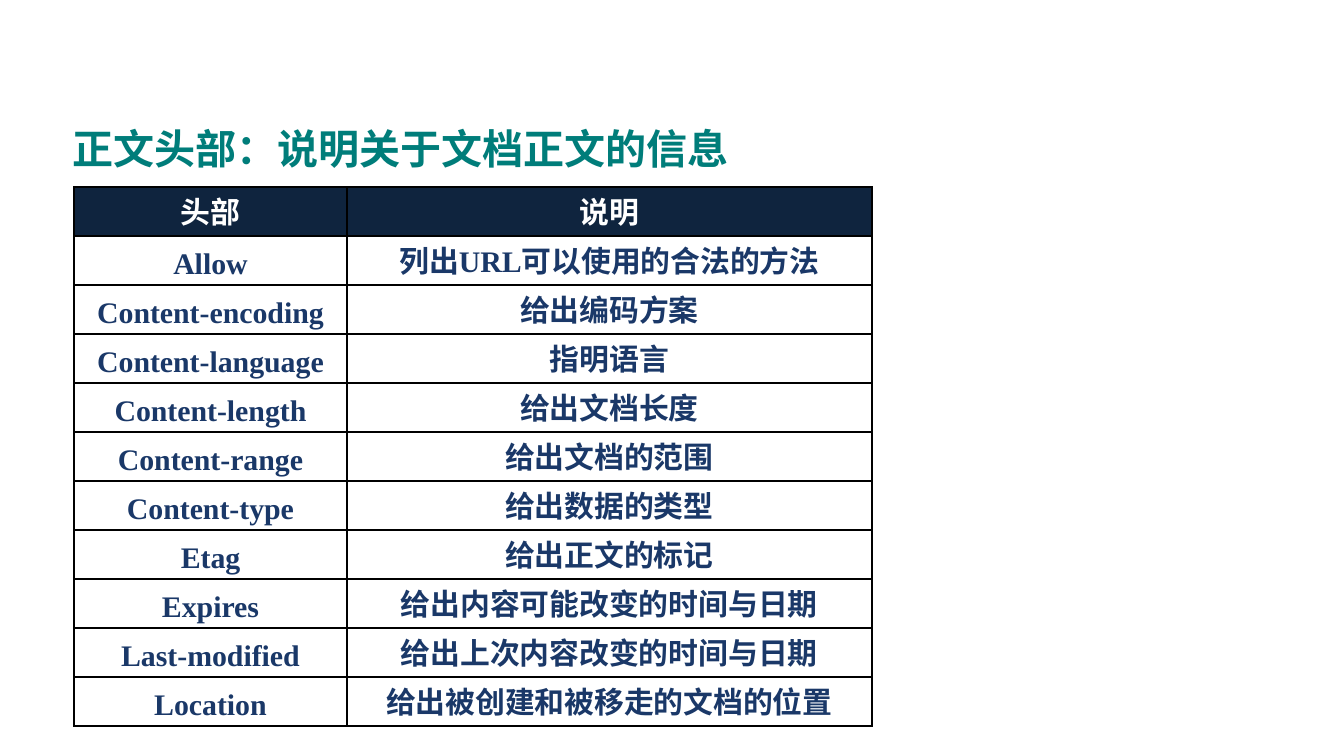
import pptx
import pptx.dml.color
import pptx.enum.text
import pptx.oxml
import pptx.oxml.ns
import pptx.util

PX = 914400 / 134.4  # EMU in one px

THEME = {
    "font": "Times New Roman",
    "title": "007D7A",
    "head_text": "FFFFFF",
    "head_fill": "0F243E",
    "body_text": "1A3868",
    "body_fill": "FFFFFF",
    "border": "000000",
    "title_size": 22,
    "cell_size": 16,
    "cell_line": 12,
}


def px(length):
    return pptx.util.Emu(round(length * PX))


def write(frame, text, *, size, color, align=None, line=None):
    frame.word_wrap = True
    paragraph = frame.paragraphs[0]
    paragraph.alignment = align
    if line:
        paragraph.line_spacing = pptx.util.Pt(line)
    run = paragraph.add_run()
    run.text = text
    run.font.name = THEME["font"]
    run.font.size = pptx.util.Pt(size)
    run.font.bold = True
    run.font.color.rgb = pptx.dml.color.RGBColor.from_string(color)


deck = pptx.Presentation()
deck.slide_width, deck.slide_height = px(1344), px(756)
slide = deck.slides.add_slide(deck.slide_layouts[6])

# Title
title = slide.shapes.add_textbox(px(59), px(93), px(1086), px(110)).text_frame
title.vertical_anchor = pptx.enum.text.MSO_ANCHOR.MIDDLE
write(title, "正文头部：说明关于文档正文的信息",
      size=THEME["title_size"], color=THEME["title"])

# Table of entity headers
HEADERS = [
    ("头部", "说明"),
    ("Allow", "列出URL可以使用的合法的方法"),
    ("Content-encoding", "给出编码方案"),
    ("Content-language", "指明语言"),
    ("Content-length", "给出文档长度"),
    ("Content-range", "给出文档的范围"),
    ("Content-type", "给出数据的类型"),
    ("Etag", "给出正文的标记"),
    ("Expires", "给出内容可能改变的时间与日期"),
    ("Last-modified", "给出上次内容改变的时间与日期"),
    ("Location", "给出被创建和被移走的文档的位置"),
]
COLUMNS = (273, 525)
ROW = 49

headers = slide.shapes.add_table(
    len(HEADERS), len(COLUMNS), px(74), px(187),
    px(sum(COLUMNS)), px(ROW * len(HEADERS))).table
headers.horz_banding = False
for column, width in zip(headers.columns, COLUMNS):
    column.width = px(width)

for r, entry in enumerate(HEADERS):
    headers.rows[r].height = px(ROW)
    part = "body" if r else "head"
    for c, text in enumerate(entry):
        cell = headers.cell(r, c)
        cell.margin_left = cell.margin_right = px(9)
        # One line of room above the text
        cell.margin_top = pptx.util.Pt(THEME["cell_line"])
        cell.margin_bottom = 0
        write(cell.text_frame, text, size=THEME["cell_size"],
              color=THEME[part + "_text"], line=THEME["cell_line"],
              align=pptx.enum.text.PP_ALIGN.CENTER)

        # Borders come before the fill in the cell properties
        for side in ("lnL", "lnR", "lnT", "lnB"):
            cell._tc.get_or_add_tcPr().append(pptx.oxml.parse_xml(
                f'<a:{side} {pptx.oxml.ns.nsdecls("a")} w="12700"><a:solidFill>'
                f'<a:srgbClr val="{THEME["border"]}"/></a:solidFill></a:{side}>'))
        cell.fill.solid()
        cell.fill.fore_color.rgb = pptx.dml.color.RGBColor.from_string(
            THEME[part + "_fill"])

deck.save("out.pptx")
